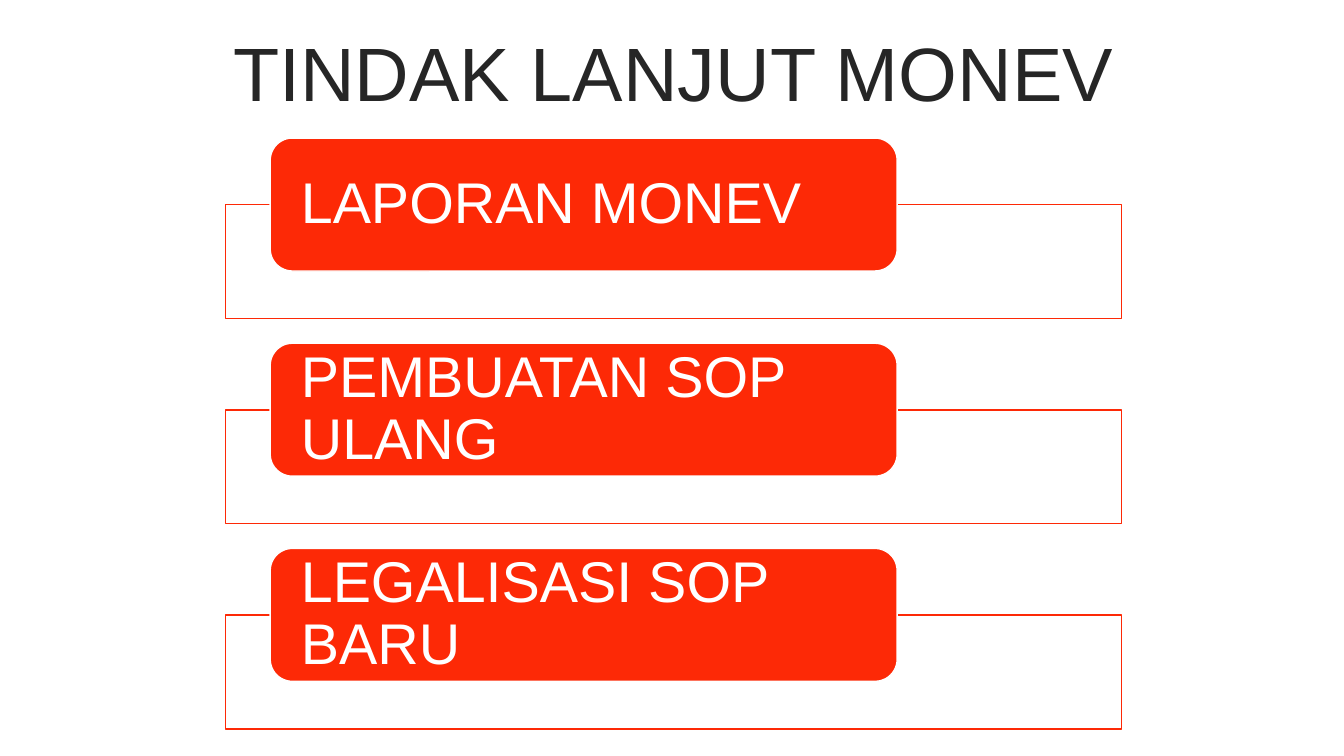
from dataclasses import dataclass

from lxml.etree import SubElement
from pptx import Presentation
from pptx.dml.color import RGBColor
from pptx.enum.shapes import MSO_SHAPE
from pptx.enum.text import MSO_ANCHOR, MSO_AUTO_SIZE, PP_ALIGN
from pptx.oxml.ns import qn
from pptx.util import Cm, Pt

HUES = {"red": "FD2906", "white": "FFFFFF", "ink": "262626"}
FIRST, PITCH = 3.48, 5.17
DROP = 1.68


@dataclass
class Step:
    """One follow-up step and its row."""
    text: str
    row: int

    @property
    def top(self) -> float:
        """Give the top of the label in centimetres."""
        return FIRST + self.row * PITCH


STEPS = [Step(text, row) for row, text in enumerate(
    ["LAPORAN MONEV", "PEMBUATAN SOP ULANG", "LEGALISASI SOP BARU"])]


def hue(name: str) -> RGBColor:
    """Look up a colour by name."""
    return RGBColor.from_string(HUES[name])


def write(shape, text: str, *, size: float, color: str, align=PP_ALIGN.LEFT,
          inset: float = 0, before: float = 0) -> None:
    """Fill a shape with one formatted paragraph."""
    frame = shape.text_frame
    frame.text = text
    frame.word_wrap = True
    frame.auto_size = MSO_AUTO_SIZE.NONE
    frame.vertical_anchor = MSO_ANCHOR.MIDDLE
    frame.margin_left = frame.margin_right = Cm(inset)
    frame.margin_top = frame.margin_bottom = 0
    para = frame.paragraphs[0]
    para.alignment = align
    para.line_spacing = 0.9
    para.space_before = Pt(before)
    font = para.runs[0].font
    font.name = "Arial"
    font.size = Pt(size)
    font.color.rgb = hue(color)


def box(slide, kind: MSO_SHAPE, left: float, top: float, width: float,
        height: float, fill: str, line: str):
    """Draw a flat outlined shape."""
    shape = slide.shapes.add_shape(
        kind, Cm(left), Cm(top), Cm(width), Cm(height))
    shape.shadow.inherit = False
    shape.fill.solid()
    shape.fill.fore_color.rgb = hue(fill)
    shape.line.color.rgb = hue(line)
    shape.line.width = Pt(1)
    return shape


def fade(shape, share: int) -> None:
    """Set the opacity of a solid fill in percent."""
    tint = shape.element.spPr.find(qn("a:solidFill"))[0]
    SubElement(tint, qn("a:alpha"), val=str(share * 1000))


def draw(slide, step: Step) -> None:
    """Draw the frame and label of a step."""
    frame = box(slide, MSO_SHAPE.RECTANGLE, 5.69, step.top + DROP,
                22.58, 2.87, "white", "red")
    fade(frame, 90)
    label = box(slide, MSO_SHAPE.ROUNDED_RECTANGLE, 6.81, step.top,
                15.8, 3.35, "red", "white")
    write(label, step.text, size=41, color="white", inset=0.61)


def main() -> None:
    """Build and save the slide."""
    deck = Presentation()
    deck.slide_width, deck.slide_height = Cm(33.87), Cm(19.05)
    slide = deck.slides.add_slide(deck.slide_layouts[5])
    title = slide.shapes.title
    title.left, title.top = Cm(0.89), Cm(0.94)
    title.width, title.height = Cm(32.16), Cm(2.01)
    write(title, "TINDAK LANJUT MONEV", size=54, color="ink",
          align=PP_ALIGN.CENTER, before=10)
    for step in STEPS:
        draw(slide, step)
    deck.save("out.pptx")


if __name__ == "__main__":
    main()
